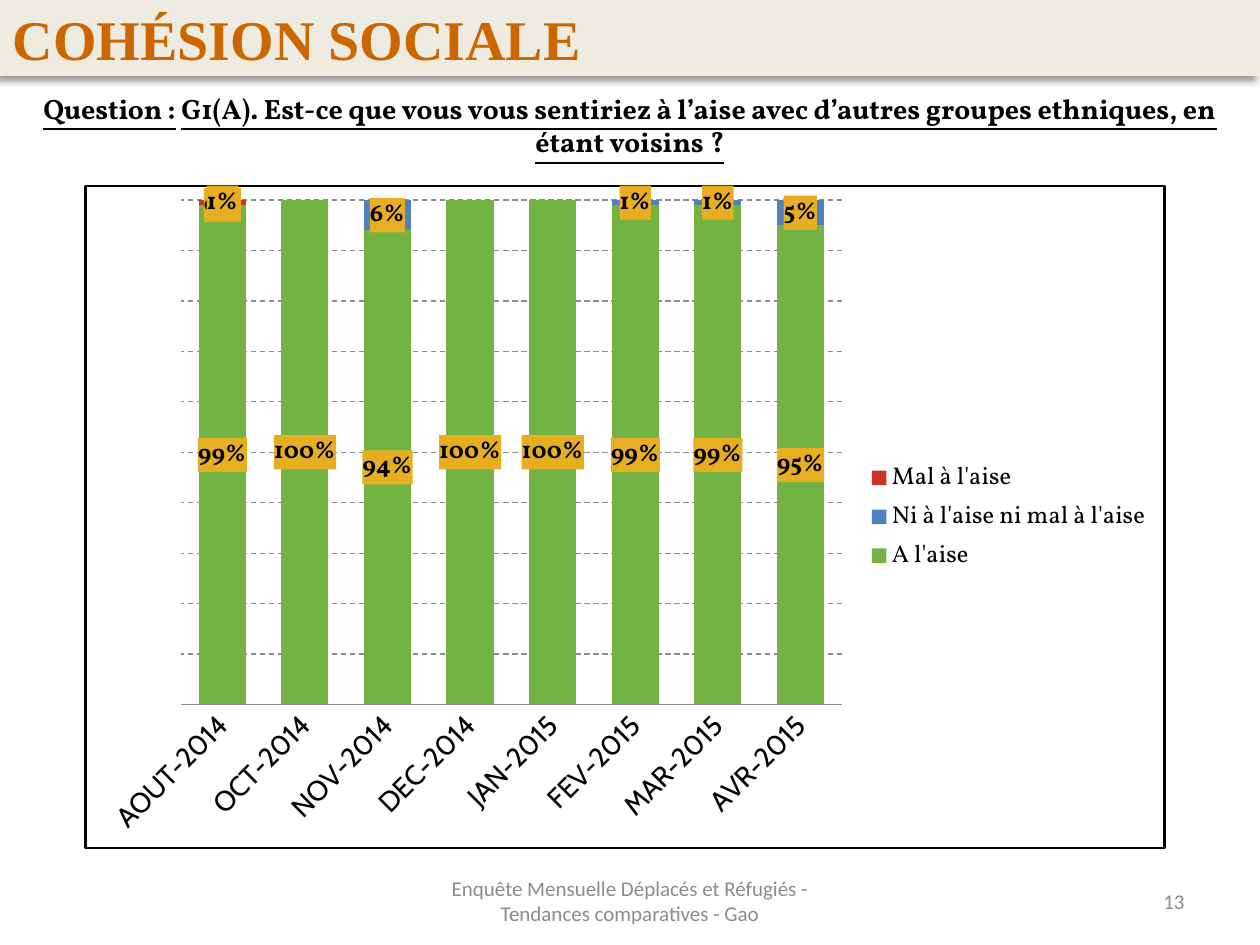
from pptx import Presentation
from pptx.chart.data import CategoryChartData
from pptx.dml.color import RGBColor
from pptx.enum.chart import XL_CHART_TYPE, XL_LEGEND_POSITION, XL_TICK_MARK
from pptx.enum.dml import MSO_LINE
from pptx.enum.text import MSO_ANCHOR, PP_ALIGN
from pptx.oxml import parse_xml
from pptx.oxml.ns import nsdecls
from pptx.util import Cm, Pt

BLACK = RGBColor(0, 0, 0)
GREY = RGBColor(0x8C, 0x8C, 0x8C)
SAND = RGBColor(0xEE, 0xEC, 0xE1)
RUST = RGBColor(0xCC, 0x66, 0x00)
GOLD = RGBColor(0xE6, 0xAE, 0x20)
GREEN = RGBColor(0x73, 0xB3, 0x43)
BLUE = RGBColor(0x4F, 0x81, 0xBD)
RED = RGBColor(0xCA, 0x34, 0x24)

MONTHS = ["AOUT-2014", "OCT-2014", "NOV-2014", "DEC-2014",
          "JAN-2015", "FEV-2015", "MAR-2015", "AVR-2015"]
SERIES = [
    ("A l'aise", GREEN, [0.99, 1, 0.94, 1, 1, 0.99, 0.99, 0.95]),
    ("Ni à l'aise ni mal à l'aise", BLUE, [0, 0, 0.06, 0, 0, 0.01, 0.01, 0.05]),
    ("Mal à l'aise", RED, [0.01, 0, 0, 0, 0, 0, 0, 0]),
]
QUESTION = [
    ("Question :", True),
    (" ", False),
    ("G1(A). Est-ce que vous vous sentiriez à l’aise avec d’autres "
     "groupes ethniques, en étant voisins ?", True),
]


class Deck:
    """Holds the style and the current slide."""

    serif, plain, head, axis = "Vollkorn", "Calibri", "Times New Roman", "Cabin"

    def __init__(self, slide):
        self.slide = slide

    def style(self, font, name, size, color, bold=False):
        font.name, font.size, font.bold = name, Pt(size), bold
        font.color.rgb = color

    def place(self, shape, box):
        shape.left, shape.top, shape.width, shape.height = map(Cm, box)

    def title(self, text, box):
        shape = self.slide.shapes.title
        self.place(shape, box)
        shape.fill.solid()
        shape.fill.fore_color.rgb = SAND
        shape._element.spPr.append(parse_xml(
            f'<a:effectLst {nsdecls("a")}><a:outerShdw blurRad="50800" '
            'dist="50800" dir="8100000" algn="tr" rotWithShape="0">'
            '<a:srgbClr val="000000"><a:alpha val="40000"/></a:srgbClr>'
            '</a:outerShdw></a:effectLst>'))
        frame = shape.text_frame
        frame.text = text
        frame.vertical_anchor = MSO_ANCHOR.MIDDLE
        line = frame.paragraphs[0]
        line.alignment = PP_ALIGN.LEFT
        self.style(line.runs[0].font, self.head, 32, RUST, True)

    def body(self, parts, box):
        shape = self.slide.placeholders[1]
        self.place(shape, box)
        frame = shape.text_frame
        frame.vertical_anchor = MSO_ANCHOR.MIDDLE
        line = frame.paragraphs[0]
        line.alignment = PP_ALIGN.CENTER
        line.space_before = Pt(0)
        props = line._p.get_or_add_pPr()
        props.set("marL", "0")
        props.set("indent", "0")
        props.append(parse_xml(f'<a:buNone {nsdecls("a")}/>'))
        for text, under in parts:
            run = line.add_run()
            run.text = text
            self.style(run.font, self.serif, 16, BLACK, True)
            run.font.underline = under

    def note(self, text, box, align):
        frame = self.slide.shapes.add_textbox(*map(Cm, box)).text_frame
        frame.word_wrap = True
        frame.vertical_anchor = MSO_ANCHOR.MIDDLE
        frame.text = text
        line = frame.paragraphs[0]
        line.alignment = align
        self.style(line.runs[0].font, self.plain, 12, GREY)

    def label(self, series, values):
        labels = series.data_labels
        labels.show_value = True
        labels.number_format = "0%"
        labels.number_format_is_linked = False
        self.style(labels.font, self.serif, 14, BLACK, True)
        root = labels._element
        root.txPr.addprevious(parse_xml(
            f'<c:spPr {nsdecls("c", "a")}><a:solidFill>'
            f'<a:srgbClr val="{GOLD}"/></a:solidFill></c:spPr>'))
        empty = [i for i, value in enumerate(values) if i and not value]
        for spot, index in enumerate(empty):
            root.insert(spot, parse_xml(
                f'<c:dLbl {nsdecls("c")}><c:idx val="{index}"/>'
                '<c:delete val="1"/></c:dLbl>'))

    def frame(self, chart, box, plot):
        root = chart._chartSpace
        root.txPr.addprevious(parse_xml(
            f'<c:spPr {nsdecls("c", "a")}><a:noFill/><a:ln w="19050">'
            f'<a:solidFill><a:srgbClr val="{BLACK}"/></a:solidFill>'
            '</a:ln></c:spPr>'))
        area = root.chart.plotArea
        for old in area.xpath("c:layout"):
            area.remove(old)
        sides = "".join(f'<c:{key} val="{part / whole:.4f}"/>'
                        for key, part, whole in zip("xywh", plot, box[2:] * 2))
        area.insert(0, parse_xml(
            f'<c:layout {nsdecls("c")}><c:manualLayout>'
            '<c:layoutTarget val="inner"/><c:xMode val="edge"/>'
            f'<c:yMode val="edge"/>{sides}</c:manualLayout></c:layout>'))

    def chart(self, box, plot):
        data = CategoryChartData(number_format="0%")
        data.categories = MONTHS
        for name, _, values in SERIES:
            data.add_series(name, values)
        chart = self.slide.shapes.add_chart(
            XL_CHART_TYPE.COLUMN_STACKED_100, *map(Cm, box), data).chart
        self.style(chart.font, self.plain, 10, BLACK)
        chart.has_title = False
        self.frame(chart, box, plot)
        bars = chart.plots[0]
        bars.gap_width, bars.overlap = 75, 100
        bars.vary_by_categories = False
        for series, (_, color, values) in zip(bars.series, SERIES):
            series.format.fill.solid()
            series.format.fill.fore_color.rgb = color
            self.label(series, values)
        months, scale = chart.category_axis, chart.value_axis
        months.major_tick_mark = XL_TICK_MARK.NONE
        months.format.line.color.rgb = GREY
        self.style(months.tick_labels.font, self.axis, 16, BLACK)
        months._element.txPr.bodyPr.set("rot", "-2700000")
        scale.visible = False
        scale.minimum_scale, scale.maximum_scale = 0, 1
        scale.major_unit = 0.1
        scale.tick_labels.number_format = "0%"
        scale.tick_labels.number_format_is_linked = False
        grid = scale.major_gridlines.format.line
        grid.color.rgb = GREY
        grid.width = Pt(0.75)
        grid.dash_style = MSO_LINE.DASH
        chart.has_legend = True
        chart.legend.position = XL_LEGEND_POSITION.RIGHT
        chart.legend.include_in_layout = False
        self.style(chart.legend.font, self.serif, 14, BLACK)


def main():
    show = Presentation()
    show.slide_width, show.slide_height = Cm(25.4), Cm(19.05)
    deck = Deck(show.slides.add_slide(show.slide_layouts[1]))
    deck.note("13", (18.2, 17.66, 5.93, 1.01), PP_ALIGN.RIGHT)
    deck.note("Enquête Mensuelle Déplacés et Réfugiés - Tendances comparatives - Gao",
              (8.68, 17.65, 8.04, 1.01), PP_ALIGN.CENTER)
    deck.title("COHÉSION SOCIALE", (0, 0, 25.4, 1.53))
    deck.body(QUESTION, (0, 1.71, 25.4, 1.62))
    deck.chart((1.7, 3.72, 21.8, 13.4), (1.93, 0.29, 13.35, 10.21))
    show.save("out.pptx")


if __name__ == "__main__":
    main()
